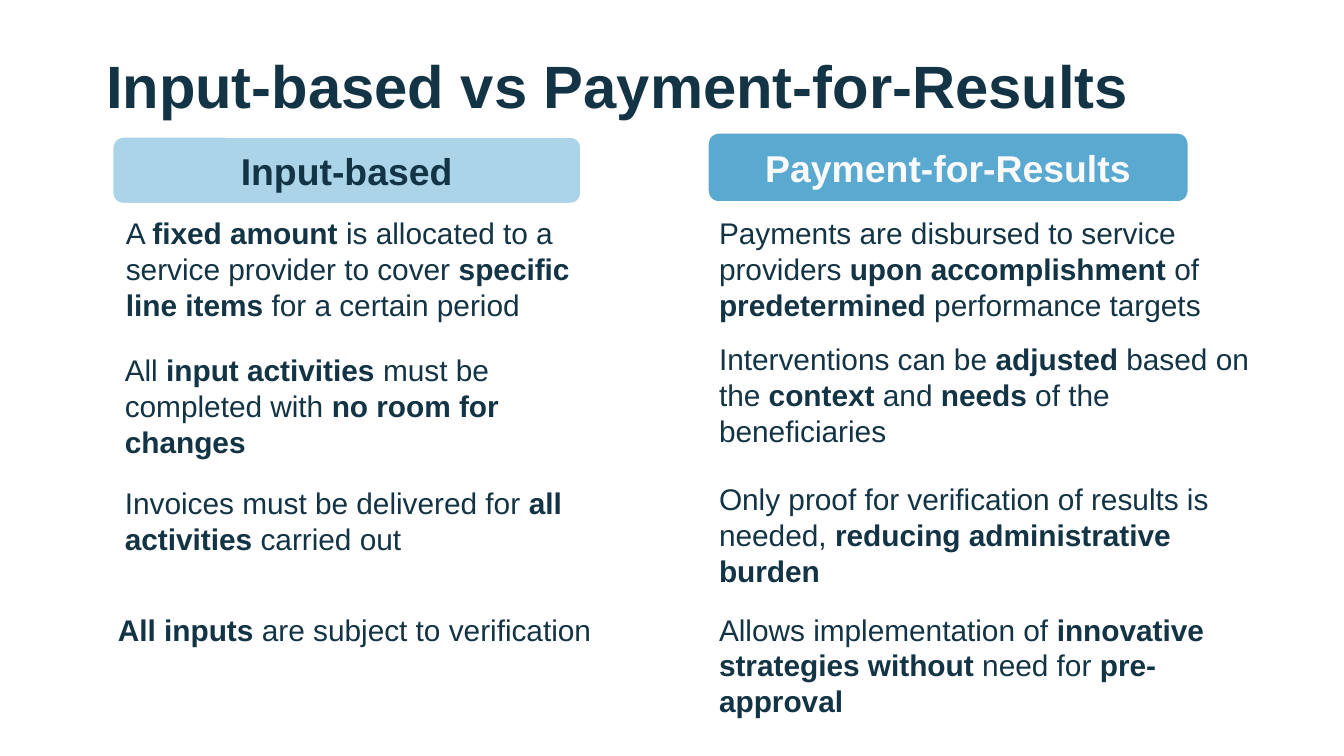
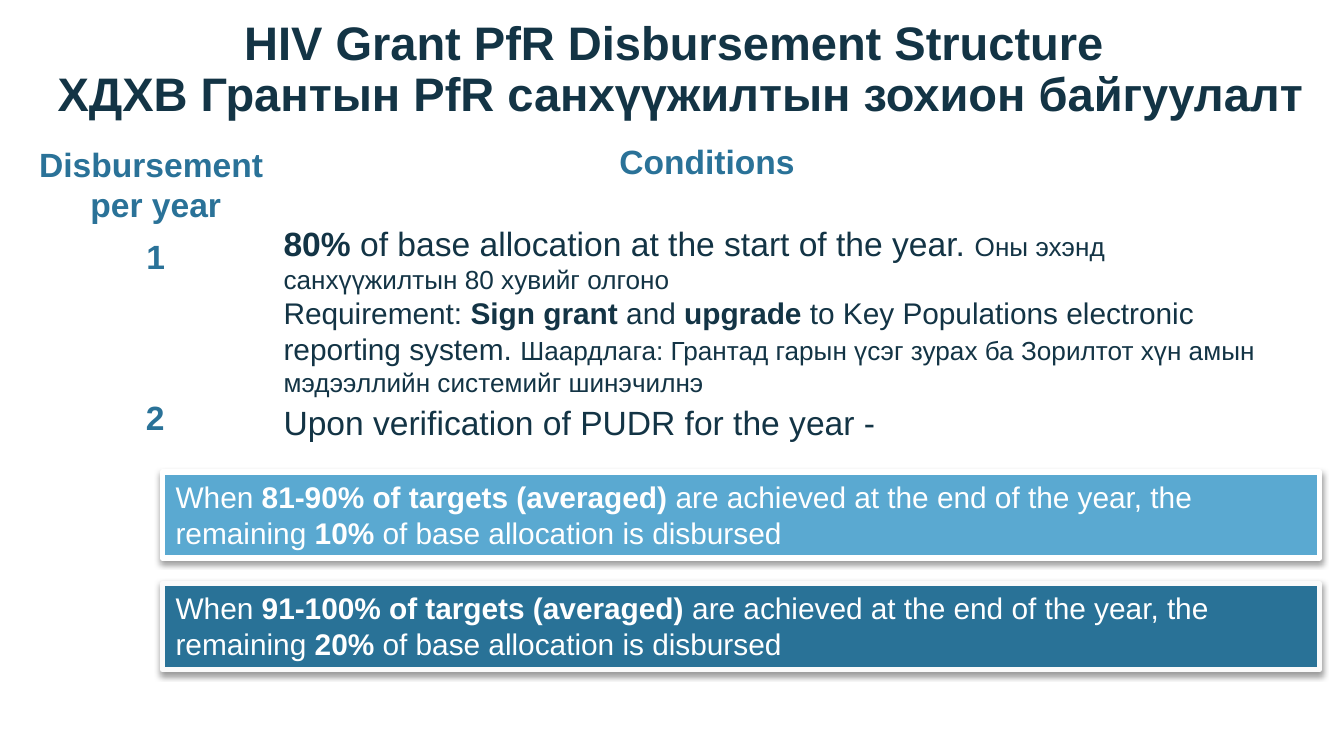
from lxml import etree
from pptx import Presentation
from pptx.dml.color import RGBColor
from pptx.enum.shapes import MSO_SHAPE as Preset
from pptx.enum.text import MSO_ANCHOR as Anchor, MSO_AUTO_SIZE as AutoSize, PP_ALIGN as Align
from pptx.oxml.ns import qn
from pptx.util import Cm, Pt

NAVY, TEAL, DEEP, SKY, PALE = "133445", "2A7298", "297297", "5AA9D1", "ACD4E8"
WHITE, OFF_WHITE = "FFFFFF", "FAFAFA"
FONT = "Arial"
BODY, LARGE, SMALL = 16, 18, 14
LINE, MARGINS = 0.68, 0.25

COMPARISON_TITLE = "Input-based vs Payment-for-Results"
COMPARISON = [
    {
        "heading": "Input-based", "fill": PALE, "color": NAVY,
        "box": (2.11, 2.57, 8.89, 1.3),
        "points": [
            (2.13, 3.94, 9.96, 3, "A **fixed amount **is allocated to a service provider to cover "
             "**specific line items** for a certain period"),
            (2.11, 6.53, 9.96, 3, "All **input activities **must be completed with **no room for changes**"),
            (2.11, 9.04, 9.6, 2, "Invoices must be delivered for **all activities **carried out"),
            (1.98, 11.43, 9.96, 1, "**All inputs **are subject to verification"),
        ],
    },
    {
        "heading": "Payment-for-Results", "fill": SKY, "color": OFF_WHITE,
        "box": (13.36, 2.49, 9.12, 1.35),
        "points": [
            (13.34, 3.94, 10.74, 3, "Payments are disbursed to service providers **upon accomplishment **of "
             "**predetermined** performance targets"),
            (13.34, 6.32, 10.74, 3, "Interventions can be **adjusted** based on the **context** and **needs** "
             "of the beneficiaries"),
            (13.34, 8.97, 10.74, 3, "Only proof for verification of results is needed, "
             "**reducing administrative burden**"),
            (13.34, 11.43, 10.16, 3, "Allows implementation of **innovative strategies without** need for "
             "**pre-approval**"),
        ],
    },
]

DISBURSEMENT_TITLE = "HIV Grant PfR Disbursement Structure \nХДХВ Грантын PfR санхүүжилтын зохион байгуулалт"
LABELS = [
    ((-0.18, 2.59, 6.25, 1.8), ["Disbursement ", "per year"]),
    ((10.24, 2.54, 6.25, 1.02), ["Conditions"]),
    ((-0.18, 4.34, 6.25, 1.02), ["1"]),
    ((0, 7.37, 5.87, 1.02), ["2"]),
]
CONDITIONS = [
    ((5.11, 4.09, 19.38, 3.58), [
        [(LARGE, "**80%** of base allocation at the start of the year. "),
         (SMALL, "Оны эхэнд санхүүжилтын 80 хувийг олгоно")],
        [(BODY, "Requirement: **Sign grant **and** upgrade** to Key Populations electronic reporting system. "),
         (SMALL, "Шаардлага: Грантад гарын үсэг зурах ба Зорилтот хүн амын мэдээллийн системийг шинэчилнэ")],
    ]),
    ((5.11, 7.47, 18.59, 1.02), [[(LARGE, "Upon verification of PUDR for the year -")]]),
]
TARGETS = [("81-90%", "10%", SKY, WHITE), ("91-100%", "20%", DEEP, OFF_WHITE)]
TARGET_TEXT = ("When **{} of targets (averaged) **are achieved at the end of the year, "
               "the remaining **{} **of base allocation is disbursed")
TARGET_LEFT, TARGET_TOP, TARGET_WIDTH, TARGET_HEIGHT, TARGET_STEP = 3.07, 8.92, 21.87, 1.63, 2.11


def rgb(color):
    return RGBColor.from_string(color)


def apply(target, **values):
    for name, value in values.items():
        setattr(target, name, value)


def place(item, box):
    apply(item, **dict(zip(("left", "top", "width", "height"), map(Cm, box))))


def write(paragraph, marked, size, color, bold=False):
    for index, words in enumerate(marked.split("**")):
        for row, line in enumerate(words.split("\n")):
            if row:
                paragraph.add_line_break()
            if line:
                run = paragraph.add_run()
                run.text = line
                apply(run.font, name=FONT, size=Pt(size), bold=bold or index % 2 == 1)
                run.font.color.rgb = rgb(color)


def fill_frame(frame, paragraphs, color, bold=False, align=Align.LEFT,
               anchor=Anchor.TOP, auto_size=AutoSize.SHAPE_TO_FIT_TEXT):
    apply(frame, word_wrap=True, auto_size=auto_size, vertical_anchor=anchor)
    for index, parts in enumerate(paragraphs):
        paragraph = frame.add_paragraph() if index else frame.paragraphs[0]
        paragraph.alignment = align
        for size, marked in parts:
            write(paragraph, marked, size, color, bold)


def add_text(slide, box, paragraphs, color=NAVY, **style):
    frame = slide.shapes.add_textbox(*map(Cm, box)).text_frame
    fill_frame(frame, paragraphs, color, **style)


def add_panel(slide, preset, box, fill, outline, weight):
    panel = slide.shapes.add_shape(preset, *map(Cm, box))
    panel.shadow.inherit = False
    panel.fill.solid()
    panel.fill.fore_color.rgb = rgb(fill)
    panel.line.color.rgb = rgb(outline)
    panel.line.width = Pt(weight)
    return panel


def add_shadow(panel):
    effects = panel.element.spPr.find(qn("a:effectLst"))
    shadow = etree.SubElement(effects, qn("a:outerShdw"), blurRad="40000", dist="20000",
                              dir="5400000", rotWithShape="0")
    tint = etree.SubElement(shadow, qn("a:srgbClr"), val="000000")
    etree.SubElement(tint, qn("a:alpha"), val="38000")


def add_slide(deck, title, box, size, align):
    slide = deck.slides.add_slide(deck.slide_layouts[5])
    heading = slide.shapes.title
    place(heading, box)
    fill_frame(heading.text_frame, [[(size, title)]], NAVY, bold=True, align=align,
               anchor=Anchor.MIDDLE, auto_size=AutoSize.NONE)
    heading.text_frame.paragraphs[0].line_spacing = 0.9
    return slide


def build_comparison(deck):
    slide = add_slide(deck, COMPARISON_TITLE, (1.75, 0.76, 21.9, 1.85), 32, Align.LEFT)
    for column in COMPARISON:
        header = add_panel(slide, Preset.ROUNDED_RECTANGLE, column["box"], column["fill"], WHITE, 2)
        fill_frame(header.text_frame, [[(20, column["heading"])]], column["color"], bold=True,
                   align=Align.CENTER, anchor=Anchor.MIDDLE, auto_size=AutoSize.NONE)
        for left, top, width, lines, point in column["points"]:
            add_text(slide, (left, top, width, MARGINS + lines * LINE), [[(BODY, point)]])


def build_disbursement(deck):
    slide = add_slide(deck, DISBURSEMENT_TITLE, (0.56, 0.1, 24.61, 2.49), 25.2, Align.CENTER)
    for box, lines in LABELS:
        add_text(slide, box, [[(LARGE, line)] for line in lines], TEAL, bold=True, align=Align.CENTER)
    for box, paragraphs in CONDITIONS:
        add_text(slide, box, paragraphs)
    for index, (achieved, share, fill, outline) in enumerate(TARGETS):
        box = (TARGET_LEFT, TARGET_TOP + index * TARGET_STEP, TARGET_WIDTH, TARGET_HEIGHT)
        band = add_panel(slide, Preset.RECTANGLE, box, fill, outline, 3)
        add_shadow(band)
        fill_frame(band.text_frame, [[(BODY, TARGET_TEXT.format(achieved, share))]], WHITE)


def main():
    deck = Presentation()
    apply(deck, slide_width=Cm(25.4), slide_height=Cm(14.29))
    build_comparison(deck)
    build_disbursement(deck)
    deck.save("out.pptx")


if __name__ == "__main__":
    main()
